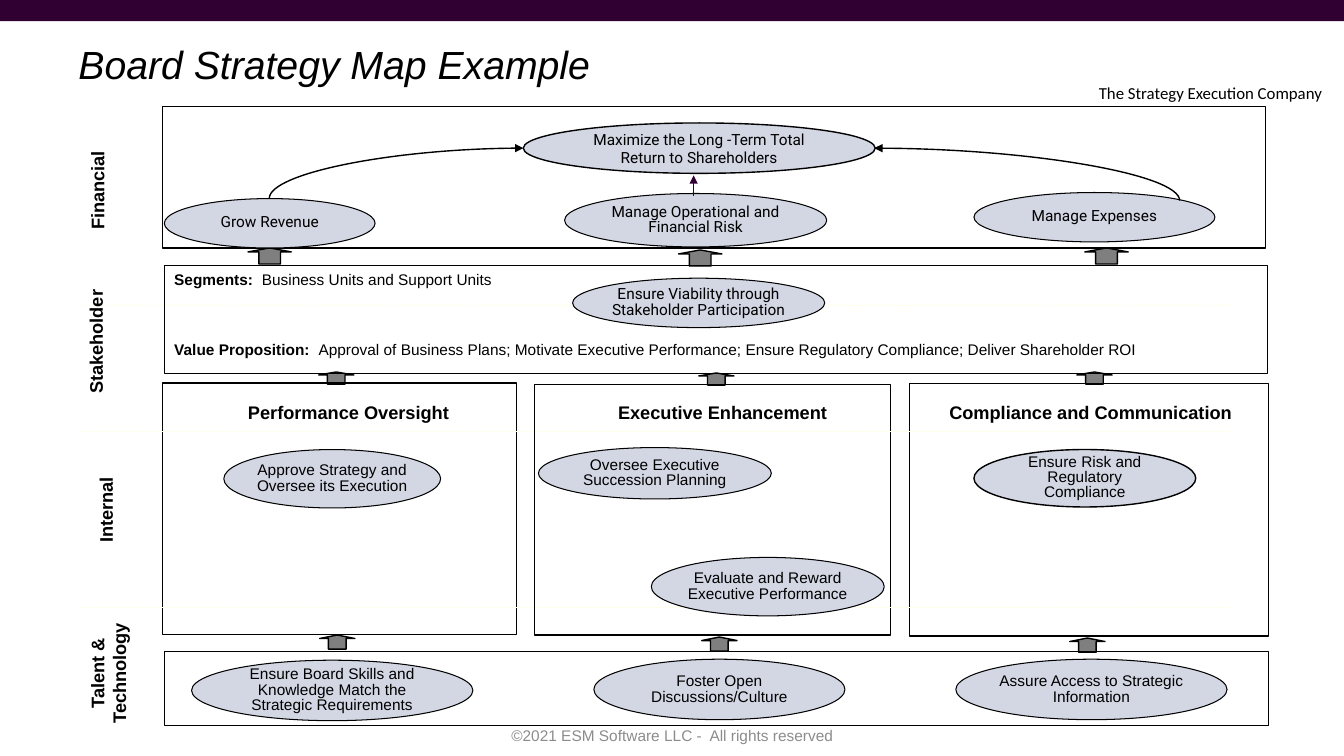
from dataclasses import dataclass

from lxml import etree
from pptx import Presentation
from pptx.dml.color import RGBColor
from pptx.enum.dml import MSO_LINE
from pptx.enum.shapes import MSO_CONNECTOR, MSO_SHAPE
from pptx.enum.text import MSO_ANCHOR, PP_ALIGN
from pptx.oxml.ns import qn
from pptx.util import Inches, Pt

RECT, OVAL, UP = MSO_SHAPE.RECTANGLE, MSO_SHAPE.OVAL, MSO_SHAPE.UP_ARROW
STRAIGHT, CURVE = MSO_CONNECTOR.STRAIGHT, MSO_CONNECTOR.CURVE
LEFT, CENTER = PP_ALIGN.LEFT, PP_ALIGN.CENTER
TOP, MIDDLE = MSO_ANCHOR.TOP, MSO_ANCHOR.MIDDLE
DOTTED = MSO_LINE.ROUND_DOT


@dataclass(frozen=True)
class Theme:
    ink: str = "000000"
    bar: str = "310032"
    riser: str = "320033"
    goal: str = "D3D6E3"
    rule: str = "FEFFE5"
    muted: str = "8C8C8C"
    sans: str = "Arial"
    round: str = "Roboto"
    brand: str = "Calibri"
    title: int = 28
    head: int = 13
    tag: int = 12
    body: int = 11
    thin: float = 0.5
    line: float = 0.75
    bold: float = 1


THEME = Theme()
WIDE, HIGH = 13.33, 7.5

TITLE = "Board Strategy Map Example"
TAGLINE = "The Strategy Execution Company"
FOOTER = "©2021 ESM Software LLC -  All rights reserved"

# left, top, width, height, line width
PANELS = [
    (1.61, 1.06, 10.94, 1.4, THEME.bold),
    (1.63, 2.63, 10.94, 1.08, THEME.line),
    (1.61, 3.8, 3.51, 2.5, THEME.line),
    (5.3, 3.81, 3.53, 2.49, THEME.line),
    (9.02, 3.8, 3.56, 2.51, THEME.line),
    (1.63, 6.46, 10.95, 0.74, THEME.line),
]
RULES = [3.03, 4.28, 6.03]

# text, box before the quarter turn, wrap, line spacing
LAYERS = [
    ("Financial", (0.47, 1.7, 1.05, 0.38), False, 1.0),
    ("Stakeholder", (0.37, 3.21, 1.25, 0.36), False, 0.9),
    ("Internal", (0.65, 4.87, 0.86, 0.38), False, 1.0),
    ("Talent & Technology", (0.46, 6.41, 1.23, 0.54), True, 1.0),
]
THEMES = [
    ("Performance Oversight", (2.32, 3.93, 2.27, 0.32)),
    ("Executive Enhancement", (6.01, 3.93, 2.31, 0.32)),
    ("Compliance and Communication", (9.27, 3.93, 3.09, 0.32)),
]
FACTS = [
    ("Segments:  ", "Business Units and Support Units", (1.63, 2.63, 10.23, 0.29)),
    ("Value Proposition:  ",
     "Approval of Business Plans; Motivate Executive Performance; "
     "Ensure Regulatory Compliance; Deliver Shareholder ROI", (1.63, 3.32, 10.23, 0.29)),
]

# text, box, line width, line spacing, vertical inset
GOALS = {
    THEME.round: [
        ("Maximize the Long -Term Total Return to Shareholders",
         (5.19, 1.22, 3.49, 0.5), THEME.bold, 1.0, 0),
        ("Grow Revenue", (1.63, 1.97, 2.09, 0.49), THEME.line, 0.85, 0.03),
        ("Manage Operational and Financial Risk",
         (5.6, 1.92, 2.6, 0.53), THEME.line, 0.85, 0.03),
        ("Manage Expenses", (9.66, 1.91, 2.39, 0.49), THEME.line, 0.85, 0.03),
        ("Ensure Viability through Stakeholder Participation",
         (5.68, 2.76, 2.5, 0.49), THEME.line, 0.85, 0.03),
    ],
    THEME.sans: [
        ("Approve Strategy and Oversee its Execution",
         (2.22, 4.46, 2.15, 0.58), THEME.line, 0.85, 0.03),
        ("Oversee Executive Succession Planning",
         (5.34, 4.44, 2.31, 0.51), THEME.line, 0.85, 0.03),
        ("Evaluate and Reward Executive Performance",
         (6.46, 5.53, 2.31, 0.58), THEME.line, 0.85, 0.03),
        ("Ensure Risk and Regulatory Compliance",
         (9.66, 4.46, 2.2, 0.57), THEME.bold, 0.8, 0),
        ("Ensure Board Skills and Knowledge Match the Strategic Requirements",
         (1.9, 6.55, 2.79, 0.6), THEME.line, 0.85, 0.03),
        ("Foster Open Discussions/Culture",
         (5.89, 6.54, 2.49, 0.6), THEME.line, 0.85, 0.03),
        ("Assure Access to Strategic Information",
         (9.48, 6.54, 2.69, 0.6), THEME.line, 0.85, 0.03),
    ],
}

# (width, height) of the arrows in a row, then their corners
ARROWS = [
    ((0.43, 0.16), [(2.46, 2.46), (6.73, 2.48), (10.76, 2.46)]),
    ((0.35, 0.12), [(3.16, 3.69), (6.93, 3.7), (10.68, 3.69)]),
    ((0.35, 0.14), [(3.17, 6.3), (6.96, 6.32), (10.61, 6.33)]),
]
CURVES = [((2.67, 1.97), (5.19, 1.47)), ((11.7, 1.99), (8.67, 1.47))]
RISER = ((6.88, 1.94), (6.88, 1.74))


def rgb(code):
    return RGBColor.from_string(code)


def write(shape, runs, size, face=THEME.sans, color=THEME.ink, align=LEFT,
          anchor=TOP, wrap=True, space=1.0, inset=(0.1, 0.05)):
    """Fill a shape with one paragraph of (text, font values) runs."""
    frame = shape.text_frame
    across, down = map(Inches, inset)
    values = {"word_wrap": wrap, "vertical_anchor": anchor,
              "margin_left": across, "margin_right": across,
              "margin_top": down, "margin_bottom": down}
    for key, value in values.items():
        setattr(frame, key, value)
    para = frame.paragraphs[0]
    para.alignment, para.line_spacing = align, space
    for text, style in runs:
        run = para.add_run()
        run.text = text
        for key, value in {"name": face, "size": Pt(size), **style}.items():
            setattr(run.font, key, value)
        run.font.color.rgb = rgb(color)


def label(slide, box, runs, size, **style):
    shape = slide.shapes.add_textbox(*map(Inches, box))
    write(shape, runs, size, **style)
    return shape


def block(slide, kind, box, fill=None, width=None):
    shape = slide.shapes.add_shape(kind, *map(Inches, box))
    shape.shadow.inherit = False
    if fill:
        shape.fill.solid()
        shape.fill.fore_color.rgb = rgb(fill)
    else:
        shape.fill.background()
    if width:
        shape.line.color.rgb = rgb(THEME.ink)
        shape.line.width = Pt(width)
    else:
        shape.line.fill.background()
    return shape


def link(slide, start, end, color, width, kind=STRAIGHT, head=True):
    line = slide.shapes.add_connector(kind, *map(Inches, start + end))
    line.line.color.rgb = rgb(color)
    line.line.width = Pt(width)
    if head:
        etree.SubElement(line.line._get_or_add_ln(), qn("a:tailEnd"), type="triangle")
    etree.SubElement(line._element.spPr, qn("a:effectLst"))
    return line


def bend(slide, start, end):
    """Draw a quarter curve that leaves upright and arrives level."""
    (x1, y1), (x2, y2) = start, end
    turn = 1 if x2 > x1 else -1
    mid_x, mid_y = (x1 + x2) / 2, (y1 + y2) / 2
    dx, dy = turn * (y1 - y2) / 2, turn * (x2 - x1) / 2
    line = link(slide, (mid_x + dx, mid_y + dy), (mid_x - dx, mid_y - dy),
                THEME.ink, THEME.bold, CURVE)
    props = line._element.spPr
    props.find(qn("a:xfrm")).set("rot", str(turn * 90 % 360 * 60000))
    props.find(qn("a:prstGeom")).set("prst", "curvedConnector2")


def main():
    deck = Presentation()
    deck.slide_width, deck.slide_height = Inches(WIDE), Inches(HIGH)
    slide = deck.slides.add_slide(deck.slide_layouts[6])
    strong = {"bold": True}

    block(slide, RECT, (0, 0, WIDE, 0.21), THEME.bar)
    label(slide, (10.8, 0.77, 2.53, 0.3), [(TAGLINE, {})], THEME.tag, face=THEME.brand)
    label(slide, (0.68, 0.4, 10.47, 0.58), [(TITLE, {"italic": True})],
          THEME.title, space=0.9)
    for *box, width in PANELS:
        block(slide, RECT, box, width=width)
    for y in RULES:
        rule = link(slide, (0.81, y), (12.19, y), THEME.rule, THEME.thin, head=False)
        rule.line.dash_style = DOTTED
    for size, spots in ARROWS:
        for spot in spots:
            arrow = block(slide, UP, spot + size, THEME.ink, THEME.bold)
            arrow.adjustments[0], arrow.adjustments[1] = 0.5, 0.25
            tint = arrow._element.spPr.find(qn("a:solidFill"))[0]
            etree.SubElement(tint, qn("a:alpha"), val="50000")

    for text, box, wrap, space in LAYERS:
        layer = label(slide, box, [(text, strong)], THEME.head,
                      align=CENTER, wrap=wrap, space=space)
        layer.rotation = 270
    for text, box in THEMES:
        label(slide, box, [(text, strong)], THEME.head, align=CENTER, wrap=False)
    for name, text, box in FACTS:
        label(slide, box, [(name, strong), (text, {})], THEME.body)
    for face, goals in GOALS.items():
        for text, box, width, space, inset in goals:
            goal = block(slide, OVAL, box, THEME.goal, width)
            write(goal, [(text, {})], THEME.body, face=face, align=CENTER,
                  anchor=MIDDLE, space=space, inset=(0, inset))

    for start, end in CURVES:
        bend(slide, start, end)
    link(slide, *RISER, THEME.riser, THEME.thin)
    label(slide, (4.42, 7.1, 4.5, 0.4), [(FOOTER, {})], THEME.body,
          color=THEME.muted, align=CENTER, anchor=MIDDLE)
    deck.save("out.pptx")


if __name__ == "__main__":
    main()
